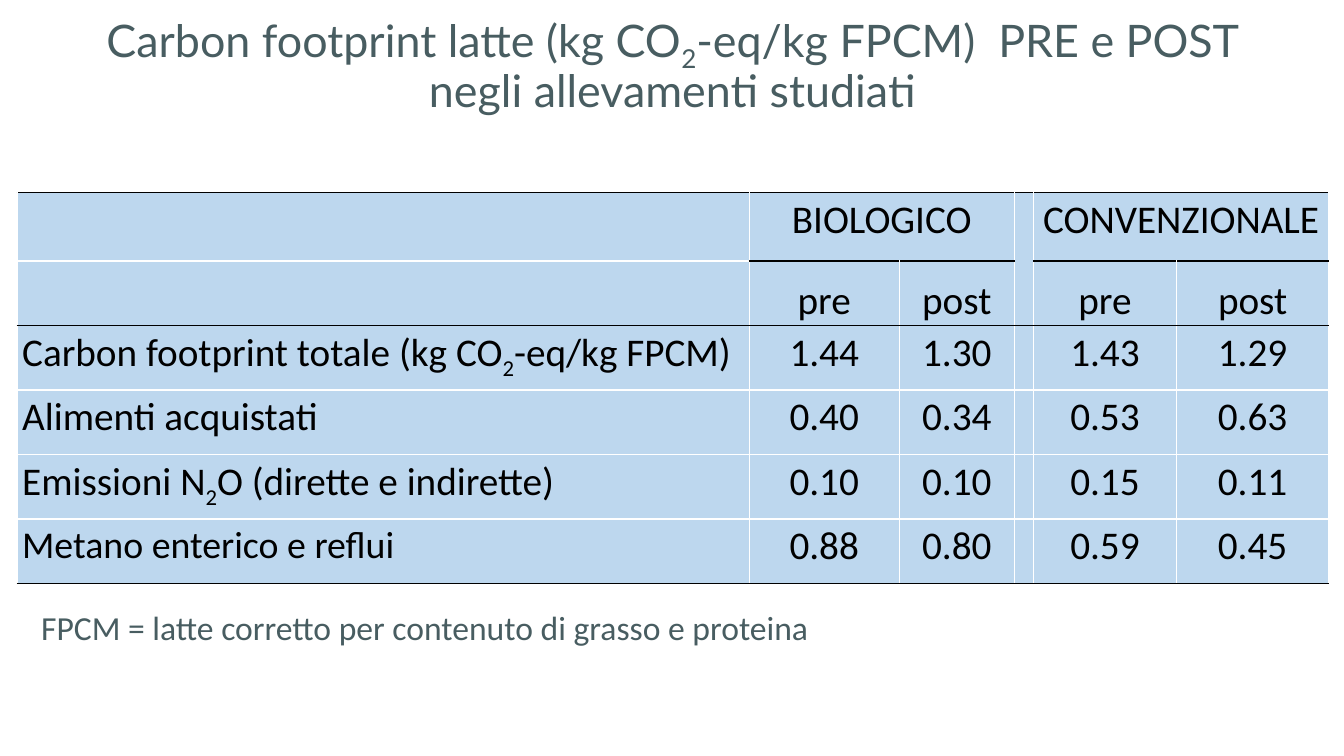
"""Build a slide comparing the milk carbon footprint of organic and conventional farms."""
import dataclasses

import lxml.etree
import pptx
import pptx.dml.color
import pptx.enum.text
import pptx.oxml.ns
import pptx.shapes.autoshape
import pptx.table
import pptx.text.text
import pptx.util

EMU_PER_PX = 9144
ALIGN = pptx.enum.text.PP_ALIGN
ANCHOR = pptx.enum.text.MSO_ANCHOR


@dataclasses.dataclass(frozen=True)
class Theme:
    heading_font: str = "Lato"
    body_font: str = "Calibri"
    slate: str = "485D61"
    black: str = "000000"
    white: str = "FFFFFF"
    cell_blue: str = "BDD7EE"
    title_size: int = 32
    table_size: int = 28
    last_label_size: int = 27
    note_size: int = 24
    border_width: int = 1


@dataclasses.dataclass(frozen=True)
class Box:
    left: int
    top: int
    width: int
    height: int


@dataclasses.dataclass(frozen=True)
class TextStyle:
    font: str
    size: int
    color: str
    alignment: ALIGN = ALIGN.LEFT
    line_spacing: float = 1.0
    space_after: int = 0


@dataclasses.dataclass(frozen=True)
class Measure:
    label: tuple[str, ...]
    values: tuple[str, str, str, str]
    label_size: int


THEME = Theme()
TITLE_BOX = Box(58, 19, 1218, 102)
TABLE_BOX = Box(17, 191, 1301, 388)
NOTE_BOX = Box(31, 597, 922, 50)
COLUMN_WIDTHS = (726, 149, 114, 19, 142, 151)
HEADER_HEIGHT, ROW_HEIGHT = 68, 64
CELL_MARGIN = 5
GAP_COLUMN = 3
GROUPS = {1: "BIOLOGICO", 4: "CONVENZIONALE"}
MEASURES = (
    Measure(("Carbon footprint totale (kg CO", "2", "-eq/kg FPCM)"),
            ("1.44", "1.30", "1.43", "1.29"), THEME.table_size),
    Measure(("Alimenti acquistati",), ("0.40", "0.34", "0.53", "0.63"), THEME.table_size),
    Measure(("Emissioni N", "2", "O (dirette e indirette)"),
            ("0.10", "0.10", "0.15", "0.11"), THEME.table_size),
    Measure(("Metano enterico e reflui",),
            ("0.88", "0.80", "0.59", "0.45"), THEME.last_label_size),
)
ROW_COUNT = 2 + len(MEASURES)
TITLE_STYLE = TextStyle(THEME.heading_font, THEME.title_size, THEME.slate, ALIGN.CENTER, 0.9)
NOTE_STYLE = TextStyle(THEME.body_font, THEME.note_size, THEME.slate)
CELL_STYLE = TextStyle(THEME.body_font, THEME.table_size, THEME.black, ALIGN.CENTER, 1.07, 8)


def px(length: int) -> pptx.util.Emu:
    """Turn a length in px into EMU."""
    return pptx.util.Emu(length * EMU_PER_PX)


def place(box: Box) -> tuple[pptx.util.Emu, ...]:
    """Return the left, top, width and height of a box in EMU."""
    return tuple(px(length) for length in dataclasses.astuple(box))


def write(paragraph: pptx.text.text._Paragraph, parts: tuple[str, ...], style: TextStyle) -> None:
    """Write text parts in one style, with every second part as a subscript."""
    paragraph.alignment = style.alignment
    paragraph.line_spacing = style.line_spacing
    paragraph.space_after = pptx.util.Pt(style.space_after)
    paragraph.font.name = style.font
    paragraph.font.size = pptx.util.Pt(style.size)
    paragraph.font.color.rgb = pptx.dml.color.RGBColor.from_string(style.color)
    for index, part in enumerate(parts):
        run = paragraph.add_run()
        run.text = part
        if index % 2:
            run._r.get_or_add_rPr().set("baseline", "-25000")


def line_color(line: int, column: int) -> str | None:
    """Return the colour of a horizontal table line above the row of that number."""
    if line == 1 and column == GAP_COLUMN:
        return None
    is_black = line in (0, 2, ROW_COUNT) or (line == 1 and column > 0)
    return THEME.black if is_black else THEME.white


def add_border(cell: pptx.table._Cell, side: str, color: str | None) -> None:
    """Draw one side of a cell, or leave it clear when there is no colour."""
    properties = cell._tc.get_or_add_tcPr()
    qualified = pptx.oxml.ns.qn
    line = lxml.etree.SubElement(properties, qualified(f"a:ln{side}"))
    line.set("w", str(pptx.util.Pt(THEME.border_width)))
    if color is None:
        lxml.etree.SubElement(line, qualified("a:noFill"))
    else:
        fill = lxml.etree.SubElement(line, qualified("a:solidFill"))
        lxml.etree.SubElement(fill, qualified("a:srgbClr")).set("val", color)


def format_cell(cell: pptx.table._Cell, row: int, column: int) -> None:
    """Set the borders, fill, margins and anchor of a cell."""
    borders = {"L": THEME.white, "R": THEME.white,
               "T": line_color(row, column), "B": line_color(row + 1, column)}
    for side, color in borders.items():
        add_border(cell, side, color)
    cell.fill.solid()
    cell.fill.fore_color.rgb = pptx.dml.color.RGBColor.from_string(THEME.cell_blue)
    cell.margin_left = cell.margin_right = px(CELL_MARGIN)
    cell.margin_top = cell.margin_bottom = 0
    cell.vertical_anchor = ANCHOR.BOTTOM if row == 1 else ANCHOR.TOP


def add_footprint_table(slide: pptx.slide.Slide) -> None:
    """Add the table of footprint values before and after."""
    table = slide.shapes.add_table(ROW_COUNT, len(COLUMN_WIDTHS), *place(TABLE_BOX)).table
    table.first_row = table.horz_banding = False
    for column, width in enumerate(COLUMN_WIDTHS):
        table.columns[column].width = px(width)
    for row in range(ROW_COUNT):
        table.rows[row].height = px(ROW_HEIGHT if row else HEADER_HEIGHT)
        for column in range(len(COLUMN_WIDTHS)):
            format_cell(table.cell(row, column), row, column)

    def fill_cell(row: int, column: int, parts: tuple[str, ...],
                  style: TextStyle = CELL_STYLE) -> None:
        write(table.cell(row, column).text_frame.paragraphs[0], parts, style)

    for column, name in GROUPS.items():
        table.cell(0, column).merge(table.cell(0, column + 1))
        fill_cell(0, column, (name,))
        for offset, phase in enumerate(("pre", "post")):
            fill_cell(1, column + offset, (phase,))
    value_columns = [column + offset for column in GROUPS for offset in range(2)]
    for row, measure in enumerate(MEASURES, start=2):
        label_style = dataclasses.replace(
            CELL_STYLE, alignment=ALIGN.JUSTIFY, size=measure.label_size)
        fill_cell(row, 0, measure.label, label_style)
        for column, value in zip(value_columns, measure.values):
            fill_cell(row, column, (value,))


def add_title(slide: pptx.slide.Slide) -> None:
    """Move and fill the title placeholder."""
    title = slide.shapes.title
    title.left, title.top, title.width, title.height = place(TITLE_BOX)
    frame = title.text_frame
    frame.auto_size = pptx.enum.text.MSO_AUTO_SIZE.NONE
    frame.word_wrap = True
    frame.vertical_anchor = ANCHOR.BOTTOM
    parts = ("Carbon footprint latte (kg CO", "2",
             "-eq/kg FPCM)  PRE e POST negli allevamenti studiati")
    write(frame.paragraphs[0], parts, TITLE_STYLE)


def add_note(slide: pptx.slide.Slide) -> None:
    """Add the note that explains the abbreviation."""
    frame = slide.shapes.add_textbox(*place(NOTE_BOX)).text_frame
    frame.word_wrap = True
    frame.auto_size = pptx.enum.text.MSO_AUTO_SIZE.SHAPE_TO_FIT_TEXT
    note = "FPCM = latte corretto per contenuto di grasso e proteina"
    write(frame.paragraphs[0], (note,), NOTE_STYLE)


def main() -> None:
    """Build and save the presentation."""
    presentation = pptx.Presentation()
    presentation.slide_width, presentation.slide_height = px(1333), px(750)
    slide = presentation.slides.add_slide(presentation.slide_layouts[5])
    add_title(slide)
    add_footprint_table(slide)
    add_note(slide)
    presentation.save("out.pptx")


if __name__ == "__main__":
    main()
